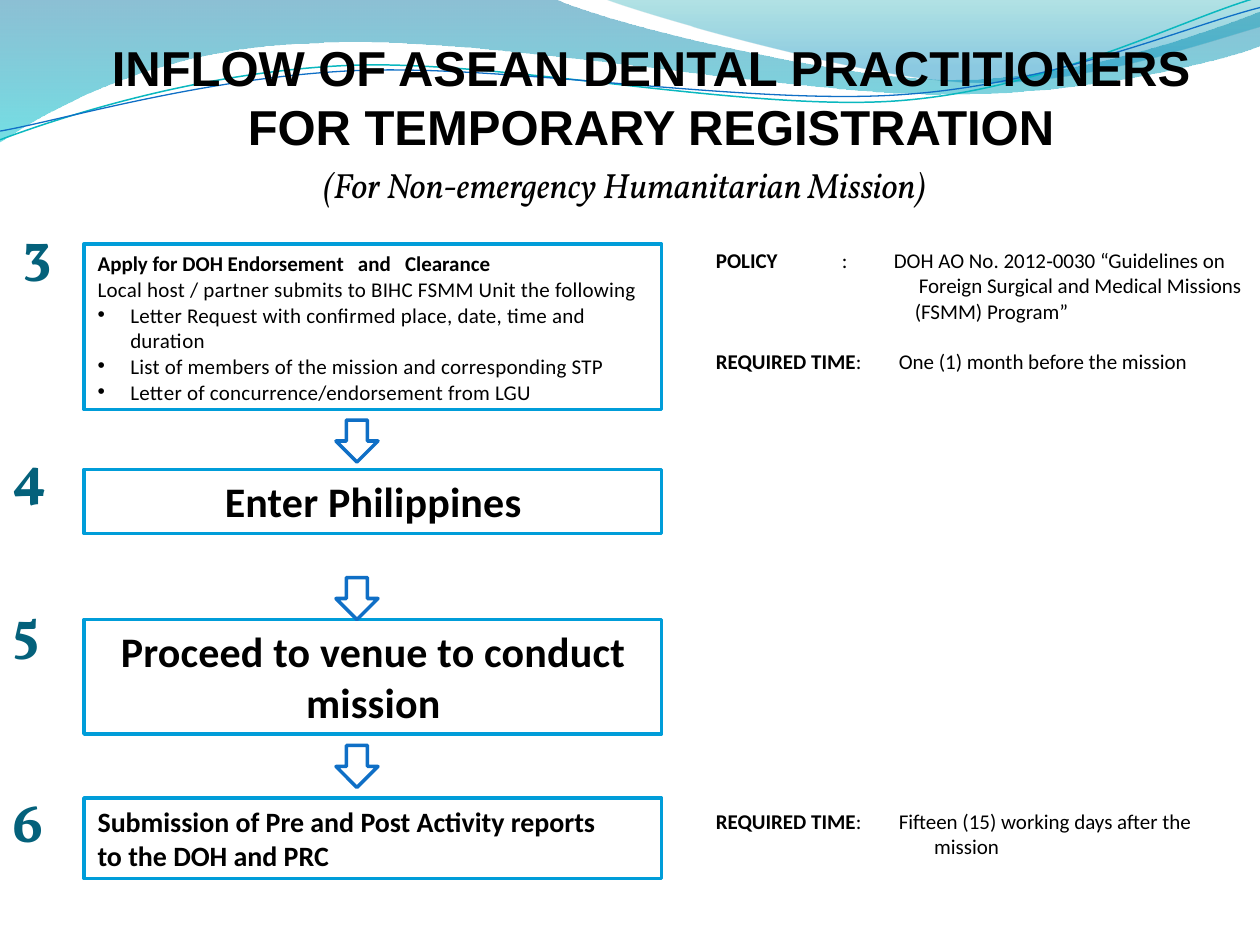
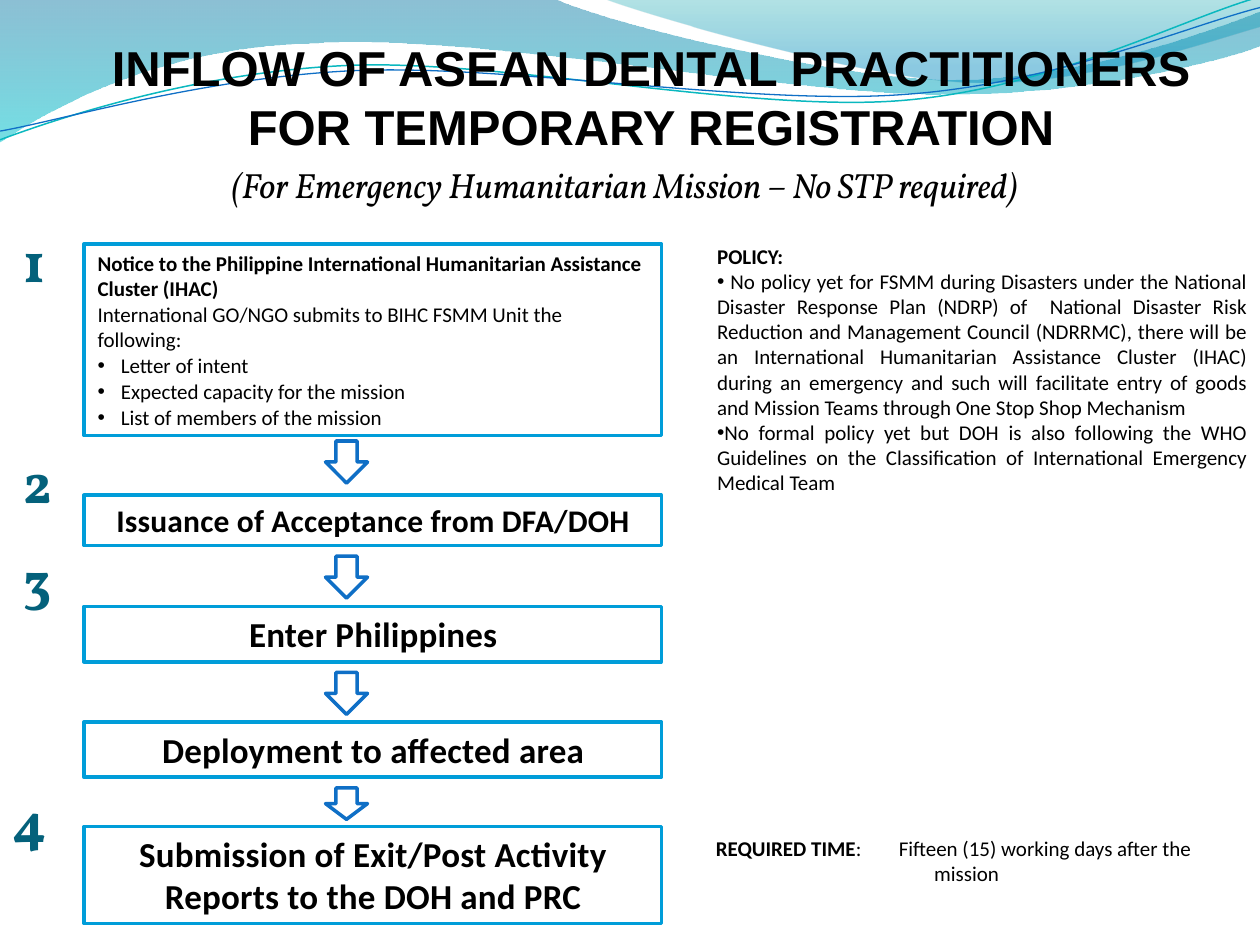
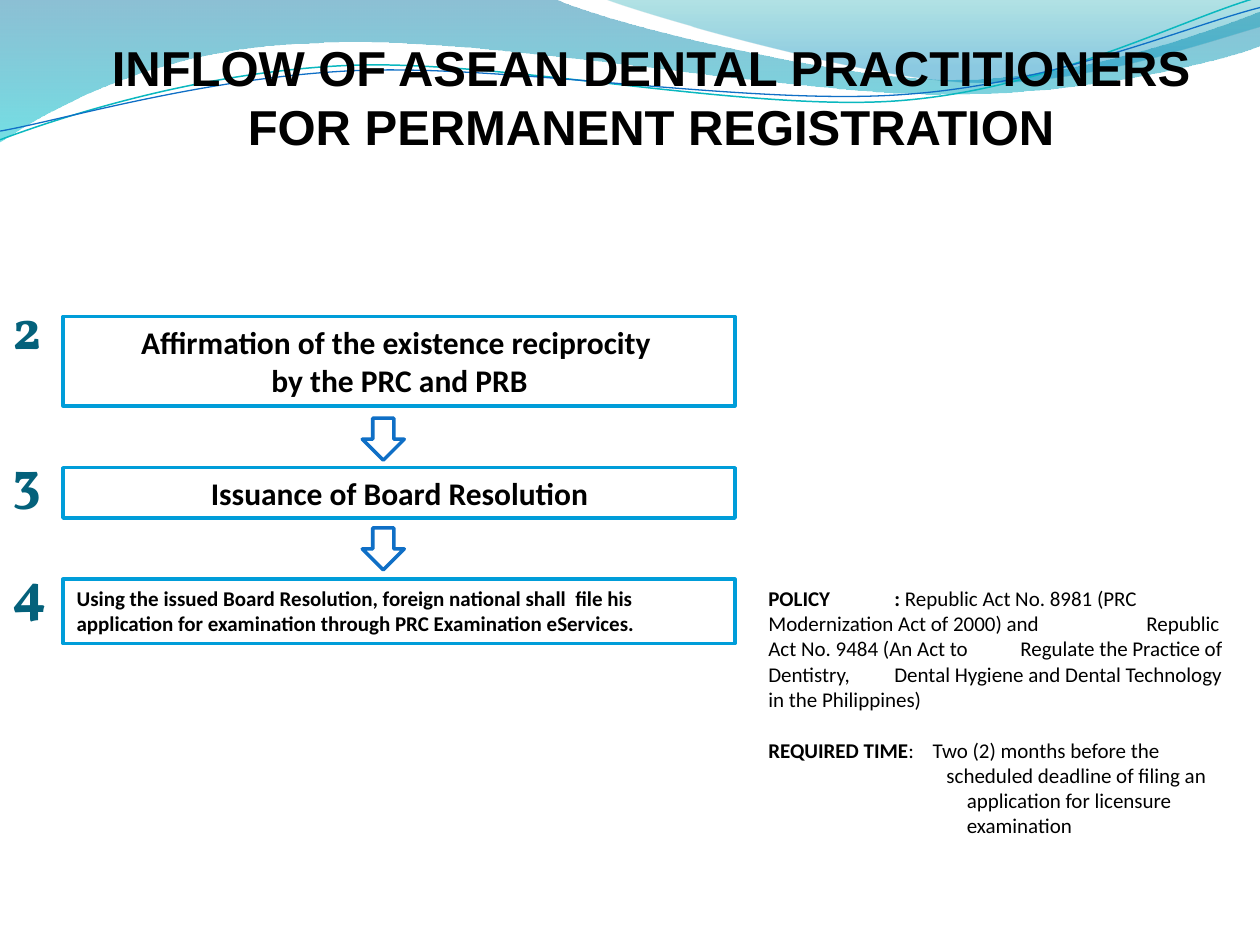
from dataclasses import dataclass

from lxml import etree
from pptx import Presentation
from pptx import util as u
from pptx.dml.color import RGBColor
from pptx.enum import shapes, text
from pptx.oxml.ns import qn


@dataclass(frozen=True)
class Theme:
    ink: str = "000000"
    paper: str = "FFFFFF"
    number: str = "04617B"
    frame: str = "009DD9"
    arrow: str = "0F6FC6"
    teal: str = "0AB8BF"
    title_font: str = "Arial"
    accent_font: str = "Vollkorn"
    body_font: str = "Calibri"
    title_size: float = 28
    subtitle_size: float = 20
    number_size: float = 32
    body_size: float = 12


@dataclass
class Para:
    label: str = ""      # bold part
    body: str = ""       # regular part
    left: float = 0.7    # left indent
    hang: float = 0      # first-line indent
    before: float = 0
    bullet: bool = False
    align: str = "LEFT"
    spc: float = 0       # letter spacing
    tabs: tuple = ()     # used in place of indents


@dataclass
class Step:
    top: float
    height: float
    paras: list
    size: float = 12
    number: str = ""
    lift: float = 0      # how far the number starts above the box
    indent: float = 48   # how far the number starts left of the box
    gap: float = None    # space between the box and the arrow below it
    arrow_h: float = 24


T = Theme()
SLIDE_W, SLIDE_H = 720, 540
COLUMN = (48, 330)             # left and width of the steps
NOTES = (402, 318)             # left and width of the remarks
WIDE_COLUMN = (36, 384)
BLANK_LINE = 14.65

# Each wave: start point, then lines (2 numbers) and cubic curves (6 numbers)
BANDS = [
    ([(0, 0), (316.8, -0.7), (342.7, 12.2, 478.1, 45.4, 545.8, 45.4),
      (614.2, 45.4, 689.8, 18.7, 720, 6.5), (720.7, 25.9),
      (707.8, 31.7, 626.4, 54.7, 537.1, 54),
      (447.8, 54, 275, 20.2, 185, 24.5),
      (92.9, 25.9, 33.1, 59.8, -0.7, 81.4)],
     [(0, "0074A1", 45), (100, "00C6CF", 55)]),
    ([(344.9, -0.7), (366.5, 7.9, 491, 44.6, 553.7, 46.8),
      (616.3, 49.7, 691.9, 23, 720, 15.1), (720, 0)],
     [(0, "00A1A9", 30), (80, "008BBF", 45)]),
]
STRANDS = [
    ([(0, 79.9), (34.6, 67, 113.8, 41, 199.4, 37.4),
      (284.4, 33.8, 427, 64.1, 513.4, 57.6),
      (599.8, 51.1, 675.4, 10.8, 718.6, -1.4)], T.teal, 0.85),
    ([(0, 74.9), (33.8, 69.1, 118.1, 43.9, 203.8, 40.3),
      (290.2, 36.7, 429.8, 60.5, 516.2, 54),
      (601.9, 48.2, 677.5, 15.1, 720, 4.3)], T.arrow, 0.75),
]


def rgb(value):
    return RGBColor.from_string(value)


def pts(box):
    return [u.Pt(v) for v in box]


# ---- text ----
def format_run(r, font, size, color, bold=False, italic=False, spc=0):
    r.font.name, r.font.size = font, u.Pt(size)
    r.font.bold, r.font.italic = bold, italic
    r.font.color.rgb = rgb(color)
    if spc:
        r.font._element.set("spc", str(round(spc * 100)))


def set_tabs(ppr, tabs):
    ppr.set("defTabSz", str(u.Pt(tabs[0])))
    stops = etree.SubElement(ppr, qn("a:tabLst"))
    for stop in tabs:
        etree.SubElement(stops, qn("a:tab"), pos=str(u.Pt(stop)), algn="l")


def fill_paragraph(p, para, size):
    p.text = para.label or para.body
    if para.label and para.body:
        p.add_run().text = para.body
    for i, r in enumerate(p.runs):
        format_run(r, T.body_font, size, T.ink,
                   bold=bool(para.label) and i == 0, spc=para.spc)
    p.alignment = getattr(text.PP_ALIGN, para.align)
    p.space_before = u.Pt(para.before)
    ppr = p._p.get_or_add_pPr()
    if para.tabs:
        set_tabs(ppr, para.tabs)
        return
    ppr.set("marL", str(u.Pt(para.left)))
    ppr.set("indent", str(u.Pt(para.hang)))
    if para.bullet:
        etree.SubElement(ppr, qn("a:buFont"), typeface="Arial")
        etree.SubElement(ppr, qn("a:buChar"), char="•")


def fill_frame(tf, paras, size):
    tf.word_wrap = True
    tf.vertical_anchor = text.MSO_ANCHOR.TOP
    for i, para in enumerate(paras):
        fill_paragraph(tf.add_paragraph() if i else tf.paragraphs[0], para, size)


def add_line(s, box, words, font, size, color, centre=False, top=3.6, **style):
    tf = s.shapes.add_textbox(*pts(box)).text_frame
    tf.word_wrap = True
    tf.margin_top = u.Pt(top)
    tf.text = words
    p = tf.paragraphs[0]
    p.alignment = text.PP_ALIGN.CENTER if centre else text.PP_ALIGN.LEFT
    format_run(p.runs[0], font, size, color, **style)


def add_notes(s, box, paras):
    fill_frame(s.shapes.add_textbox(*pts(box)).text_frame, paras, T.body_size)


# ---- wave background, kept on the layout ----
def bend(sp, segments, corners):
    """Turn the straight sides of a freeform into its cubic curves."""
    left, top = (min(values) for values in zip(*corners))
    sides = list(sp.element.iter(qn("a:lnTo")))
    for side, seg in zip(sides, segments):
        if len(seg) == 2:
            continue
        curve = etree.Element(qn("a:cubicBezTo"))
        for x, y in zip(seg[::2], seg[1::2]):
            etree.SubElement(curve, qn("a:pt"), x=str(round((x - left) * 100)),
                             y=str(round((y - top) * 100)))
        side.getparent().replace(side, curve)


def add_wave(s, segments, close):
    corners = [seg[-2:] for seg in segments]
    points = [(x * 100, y * 100) for x, y in corners]
    builder = s.shapes.build_freeform(*points[0], scale=u.Pt(1) / 100)
    builder.add_line_segments(points[1:], close=close)
    sp = builder.convert_to_shape()
    bend(sp, segments[1:], corners)
    sp.shadow.inherit = False
    return sp


def set_gradient(sp, stops):
    sp.fill.gradient()
    sp.fill.gradient_angle = 270    # top to bottom
    gs_list = sp.element.spPr.find(qn("a:gradFill")).find(qn("a:gsLst"))
    for gs in list(gs_list):
        gs_list.remove(gs)
    for pos, color, alpha in stops:
        gs = etree.SubElement(gs_list, qn("a:gs"), pos=str(pos * 1000))
        clr = etree.SubElement(gs, qn("a:srgbClr"), val=color)
        etree.SubElement(clr, qn("a:alpha"), val=str(alpha * 1000))


def move_waves_to_layout(s, layout):
    for ph in list(layout.placeholders):
        layout.shapes.element.remove(ph.element)
    waves = []
    for segments, stops in BANDS:
        sp = add_wave(s, segments, True)
        set_gradient(sp, stops)
        sp.line.fill.background()
        waves.append(sp)
    for segments, color, width in STRANDS:
        sp = add_wave(s, segments, False)
        sp.fill.background()
        sp.line.color.rgb, sp.line.width = rgb(color), u.Pt(width)
        waves.append(sp)
    for sp in waves:
        layout.shapes.element.append(sp.element)


# ---- heading ----
def add_heading(s, kind, subtitle=None):
    add_line(s, (24, 18, 696, 75),
             f"INFLOW OF ASEAN DENTAL PRACTITIONERS FOR {kind} REGISTRATION",
             T.title_font, T.title_size, T.ink, centre=True, bold=True)
    if subtitle:
        add_line(s, (-3, 66, SLIDE_W, 56), subtitle, T.accent_font,
                 T.subtitle_size, T.ink, centre=True, top=27.4, italic=True)


# ---- numbered steps with arrows ----
def add_framed(s, kind, box, color):
    sp = s.shapes.add_shape(kind, *pts(box))
    sp.shadow.inherit = False
    sp.fill.solid()
    sp.fill.fore_color.rgb = rgb(T.paper)
    sp.line.color.rgb, sp.line.width = rgb(color), u.Pt(2)
    return sp


def add_flow(s, column, steps, arrow_dx):
    left, width = column
    for st in steps:
        sp = add_framed(s, shapes.MSO_SHAPE.RECTANGLE,
                        (left, st.top, width, st.height), T.frame)
        fill_frame(sp.text_frame, st.paras, st.size)
        if st.number:
            add_line(s, (left - st.indent, st.top - st.lift, 18, 46), st.number,
                     T.accent_font, T.number_size, T.number, bold=True)
    for st in steps:
        if st.gap is not None:
            add_framed(s, shapes.MSO_SHAPE.DOWN_ARROW,
                       (left + arrow_dx, st.top + st.height + st.gap,
                        24, st.arrow_h), T.arrow)


def centred(words, spc=0.1):
    return Para(words, align="CENTER", spc=spc)


def bullets(items, indent, spc=0):
    return [Para(body=item, left=indent, hang=0.7 - indent, before=0.4,
                 bullet=True, spc=spc) for item in items]


def required_time(words, tab=104.5, before=0):
    return Para("REQUIRED TIME", f":\t{words}", tabs=(tab,), before=before)


REPORT_TIME = [required_time("Fifteen (15) working days after the"),
               Para(body="mission", left=124.7)]


# ---- slides ----
def non_emergency(s):
    add_heading(s, "TEMPORARY", "(For Non-emergency Humanitarian Mission)")
    apply = [
        Para("Apply for DOH Endorsement   and   Clearance"),
        Para(body="Local host / partner submits to BIHC FSMM Unit the following",
             before=0.4, spc=0.15),
        *bullets(["Letter Request with confirmed place, date, time and duration",
                  "List of members of the mission and corresponding STP",
                  "Letter of concurrence/endorsement from LGU"], 19.4, 0.15)]
    reports = [Para("Submission of Pre and Post Activity reports"),
               Para("to the DOH and PRC", before=0.4)]
    add_flow(s, COLUMN, [
        Step(139.5, 94.5, apply, 12, "3", 19.5, indent=42, gap=6),
        Step(268.2, 36.7, [centred("Enter Philippines")], 24, "4", 20.2, gap=25.1),
        Step(354, 65.5, [centred("Proceed to venue to conduct mission")], 24,
             "5", 18, gap=6.5),
        Step(456, 46, reports, 16, "6", 10)], arrow_dx=144)
    left, width = NOTES
    add_notes(s, (left, 138, width, 80), [
        Para("POLICY", "\t:\tDOH AO No. 2012‐0030 “Guidelines on",
             tabs=(72, 101.7)),
        Para(body="Foreign Surgical and Medical Missions", left=116),
        Para(body="(FSMM) Program”", left=113.7),
        required_time("One (1) month before the mission", before=BLANK_LINE)])
    add_notes(s, (left, 458.3, width, 36), REPORT_TIME)


def emergency(s):
    add_heading(s, "TEMPORARY",
                "(For Emergency Humanitarian Mission – No STP required)")
    notice = [
        Para("Notice to the Philippine International Humanitarian Assistance "
             "Cluster (IHAC)"),
        Para(body="International GO/NGO submits to BIHC FSMM Unit the following:",
             before=0.4),
        *bullets(["Letter of intent", "Expected capacity for the mission",
                  "List of members of the mission"], 14)]
    add_flow(s, COLUMN, [
        Step(139.5, 109.4, notice, 12, "1", 13.5, indent=42, gap=3.1),
        Step(283, 28.8, [centred("Issuance of Acceptance from DFA/DOH")], 18,
             "2", 31, indent=42, gap=6),
        Step(346.5, 31.7, [centred("Enter Philippines")], 20,
             "3", 38.5, indent=42, gap=6),
        Step(412.5, 31.7, [centred("Deployment to affected area")], 20,
             gap=6, arrow_h=18),
        Step(472.3, 55.4, [centred("Submission of Exit/Post Activity Reports to "
                                   "the DOH and PRC")], 20, "4", 26.3)],
        arrow_dx=138)
    left, width = NOTES
    add_notes(s, (left, 135.4, width, 167), [
        Para("POLICY:"),
        Para(body=" No policy yet for FSMM during Disasters under the National "
             "Disaster Response Plan (NDRP) of  National Disaster Risk Reduction "
             "and Management Council (NDRRMC), there will be an International "
             "Humanitarian Assistance Cluster (IHAC) during an emergency and such "
             "will facilitate entry of goods and Mission Teams through One Stop "
             "Shop Mechanism", bullet=True, align="JUSTIFY"),
        Para(body="No formal policy yet but DOH is also following the WHO "
             "Guidelines on the Classification of International Emergency "
             "Medical Team", bullet=True, align="JUSTIFY")])
    add_notes(s, (left, 473.8, width, 37), REPORT_TIME)


def permanent(s):
    add_heading(s, "PERMANENT")
    affirm = [centred("Affirmation of the existence reciprocity ", 0),
              centred("by the PRC and PRB", 0)]
    filing = [Para("Using the issued Board Resolution, foreign national shall  file "
                   "his application for examination through PRC Examination "
                   "eServices.")]
    add_flow(s, WIDE_COLUMN, [
        Step(180.9, 51, affirm, 18, "2", 16.6, indent=36, gap=7.1),
        Step(267.3, 28.8, [centred("Issuance of Board Resolution", 0)], 18,
             "3", 16.6, indent=36, gap=5.6),
        Step(331, 36.7, filing, 12, "4", 16.4, indent=36)], arrow_dx=171)
    add_notes(s, (432, 331, 282, 167), [
        Para("POLICY\t: ", "Republic Act No. 8981 (PRC \tModernization Act of 2000) "
             "and \tRepublic Act No. 9484 (An Act to \tRegulate the Practice of "
             "Dentistry, \tDental Hygiene and Dental Technology \tin the "
             "Philippines)", tabs=(72, 144, 216, 288)),
        required_time("Two (2) months before the", tab=93.9, before=BLANK_LINE),
        Para(body="scheduled deadline of filing an", left=101.8),
        Para(body="application for licensure", left=113.4),
        Para(body="examination", left=113.4)])


def main():
    prs = Presentation()
    prs.slide_width, prs.slide_height = u.Pt(SLIDE_W), u.Pt(SLIDE_H)
    blank = prs.slide_layouts[6]
    for i, build in enumerate((non_emergency, emergency, permanent)):
        s = prs.slides.add_slide(blank)
        if i == 0:
            move_waves_to_layout(s, blank)
        build(s)
    prs.save("out.pptx")


if __name__ == "__main__":
    main()
